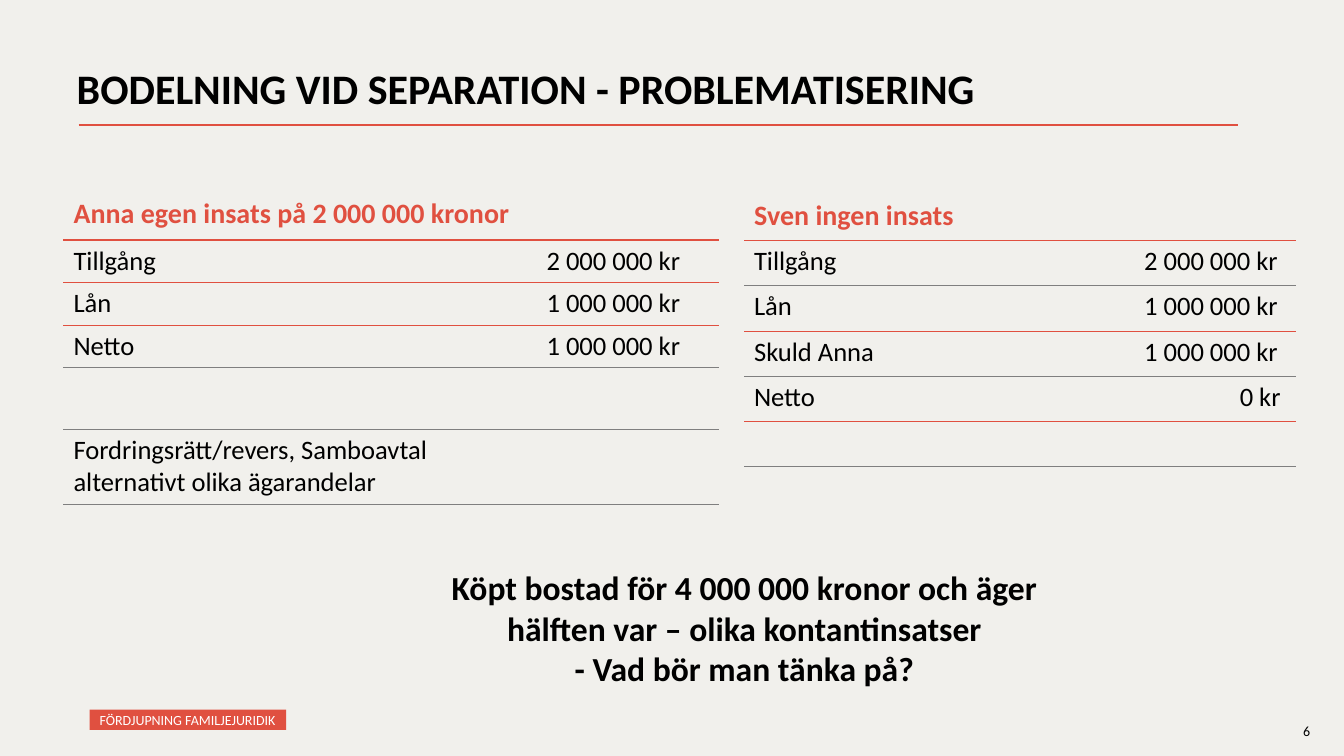
from lxml import etree
from pptx import Presentation
from pptx.dml.color import RGBColor
from pptx.enum.shapes import MSO_CONNECTOR
from pptx.enum.text import MSO_ANCHOR as ANCHOR, MSO_AUTO_SIZE as AUTO, PP_ALIGN as ALIGN
from pptx.oxml.ns import qn
from pptx.util import Cm, Pt

RED = RGBColor(0xE0, 0x50, 0x40)
GRAY = RGBColor(0x7F, 0x7F, 0x7F)
BLACK = RGBColor(0, 0, 0)
WHITE = RGBColor(0xFF, 0xFF, 0xFF)
PAPER = RGBColor(0xF1, 0xF0, 0xEC)


def add_run(p, text, size, color=BLACK, bold=False):
    r = p.add_run()
    r.text = text
    f = r.font
    f.name, f.size, f.bold = "Calibri", Pt(size), bold
    f.color.rgb = color


def set_border(cell, side, color=None, width=0.5):
    ln = etree.SubElement(cell._tc.get_or_add_tcPr(), qn("a:ln" + side))
    if color is None:
        etree.SubElement(ln, qn("a:noFill"))
        return
    ln.set("w", str(Pt(width)))
    fill = etree.SubElement(ln, qn("a:solidFill"))
    etree.SubElement(fill, qn("a:srgbClr")).set("val", str(color))


prs = Presentation()
prs.slide_width, prs.slide_height = Cm(33.87), Cm(19.05)
s = prs.slides.add_slide(prs.slide_layouts[1])
s.background.fill.solid()
s.background.fill.fore_color.rgb = PAPER

# Title and the rule below it
sp = s.shapes.title
sp.left, sp.top, sp.width, sp.height = Cm(1.68), Cm(1.6), Cm(29.2), Cm(2.74)
tf = sp.text_frame
tf.auto_size, tf.vertical_anchor = AUTO.NONE, ANCHOR.TOP
p = tf.paragraphs[0]
p.alignment, p.line_spacing = ALIGN.LEFT, 0.9
add_run(p, "BODELNING VID SEPARATION - PROBLEMATISERING", 30, bold=True)

rule = s.shapes.add_connector(MSO_CONNECTOR.STRAIGHT, Cm(1.98), Cm(3.15), Cm(31.19), Cm(3.15))
rule.line.color.rgb = RED
rule.line.width = Pt(1.5)
etree.SubElement(rule._element.spPr, qn("a:effectLst"))

# One table per person: left, top, column widths, row heights, line colours, rows
tables = [
    (1.6, 4.83, (11.92, 4.61), (1.22, 1.07, 1.07, 1.07, 1.56, 1.86),
     (RED, RED, RED, GRAY, GRAY, GRAY),
     [("Anna egen insats på 2 000 000 kronor", ""),
      ("Tillgång", "2 000 000 kr"),
      ("Lån", "1 000 000 kr"),
      ("Netto", "1 000 000 kr"),
      ("", ""),
      ("Fordringsrätt/revers, Samboavtal alternativt olika ägarandelar", "")]),
    (18.75, 4.87, (9.83, 4.09), (1.19,) + (1.14,) * 5,
     (RED, GRAY) * 3,
     [("Sven ingen insats", ""),
      ("Tillgång", "2 000 000 kr"),
      ("Lån", "1 000 000 kr"),
      ("Skuld Anna", "1 000 000 kr"),
      ("Netto", "0 kr"),
      ("", "")]),
]
for left, top, widths, heights, lines, rows in tables:
    table = s.shapes.add_table(len(rows), 2, Cm(left), Cm(top),
                               Cm(sum(widths)), Cm(sum(heights))).table
    table.first_row = table.horz_banding = False
    for col, width in zip(table.columns, widths):
        col.width = Cm(width)
    for i, row in enumerate(rows):
        table.rows[i].height = Cm(heights[i])
        for j, text in enumerate(row):
            cell = table.cell(i, j)
            set_border(cell, "L")
            set_border(cell, "R")
            set_border(cell, "T", lines[i - 1] if i else None, 1 if i == 1 else 0.5)
            set_border(cell, "B", lines[i], 0.5 if i else 1)
            cell.fill.background()
            p = cell.text_frame.paragraphs[0]
            if text == "0 kr":
                p.alignment = ALIGN.RIGHT
                cell.margin_right = Cm(0.4)
            if text and i == 0:
                add_run(p, text, 20, RED, True)
            elif text:
                add_run(p, text, 19)

# Course tag
sp = s.placeholders[1]
sp.left, sp.top, sp.width, sp.height = Cm(2.26), Cm(17.88), Cm(4.95), Cm(0.51)
sp.fill.solid()
sp.fill.fore_color.rgb = RED
tf = sp.text_frame
tf.auto_size, tf.vertical_anchor = AUTO.NONE, ANCHOR.MIDDLE
tf.margin_left, tf.margin_top = Cm(0.25), Cm(0.2)
tf.margin_right, tf.margin_bottom = Cm(0.1), Cm(0.13)
p = tf.paragraphs[0]
pPr = p._p.get_or_add_pPr()
pPr.set("marL", "0")
pPr.set("indent", "0")
etree.SubElement(pPr, qn("a:buNone"))
p.line_spacing, p.space_before = 0.9, Pt(0)
add_run(p, "FÖRDJUPNING FAMILJEJURIDIK", 10, WHITE)

# Closing question
tf = s.shapes.add_textbox(Cm(10.49), Cm(14.17), Cm(16.54), Cm(3.33)).text_frame
tf.word_wrap = True
question = ["Köpt bostad för 4 000 000 kronor och äger hälften var – olika kontantinsatser",
            "- Vad bör man tänka på?"]
for i, text in enumerate(question):
    p = tf.add_paragraph() if i else tf.paragraphs[0]
    p.alignment = ALIGN.CENTER
    add_run(p, text, 24, bold=True)

# Page number
tf = s.shapes.add_textbox(Cm(32.59), Cm(18.08), Cm(1.02), Cm(0.69)).text_frame
tf.word_wrap = True
add_run(tf.paragraphs[0], "6", 10)

prs.save("out.pptx")
